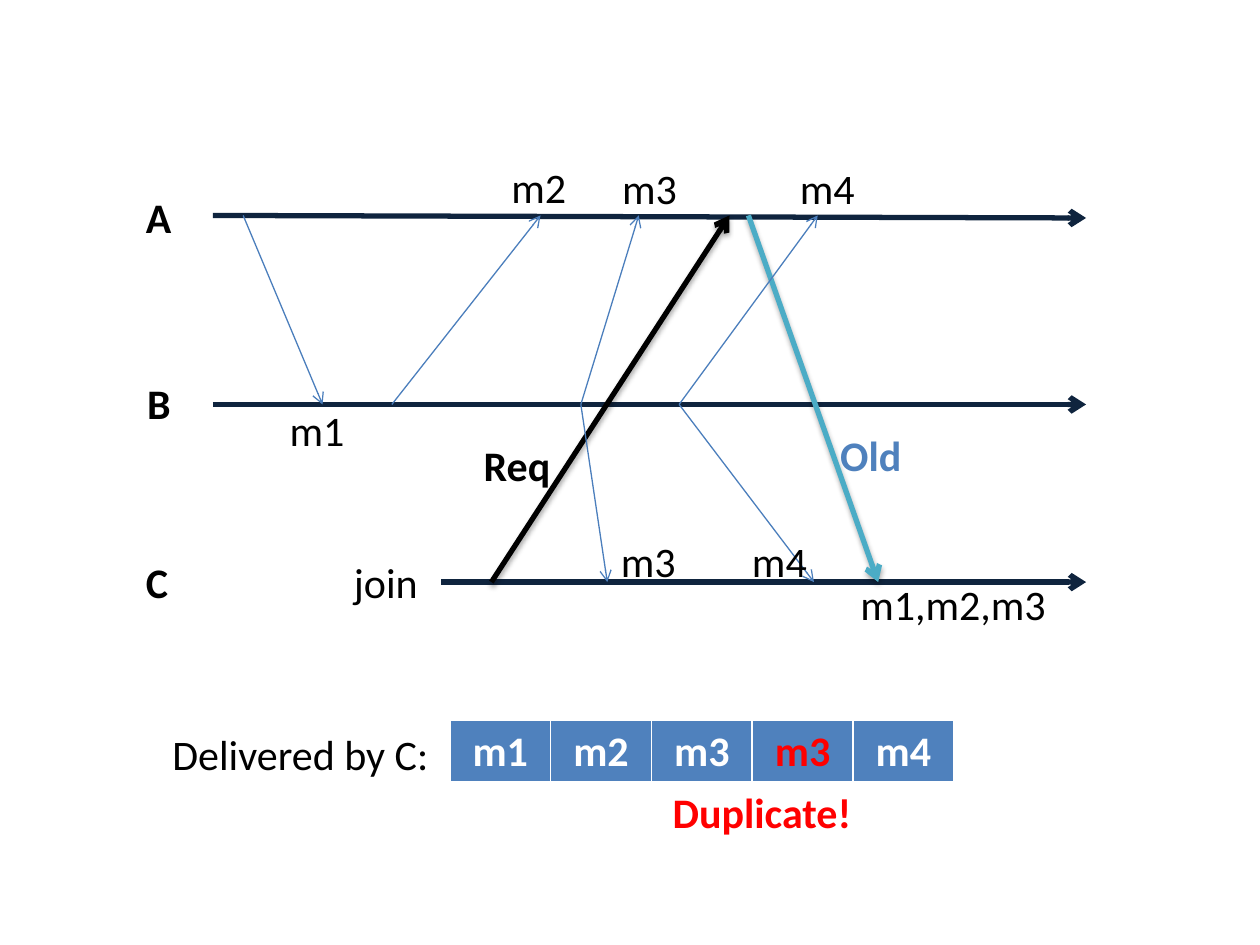
"""Build a message timeline of three processes with the delivery order at C."""
from lxml.etree import SubElement
from pptx import Presentation
from pptx.dml.color import RGBColor as Color
from pptx.enum.shapes import MSO_CONNECTOR as Connector
from pptx.enum.text import MSO_ANCHOR as Anchor, MSO_AUTO_SIZE as AutoSize, PP_ALIGN as Align
from pptx.oxml.ns import qn
from pptx.util import Inches, Pt

THEME = {
    "font": "Calibri", "size": 24, "thick": 3, "thin": 0.75,
    "text": "000000", "axis": "0F243E", "message": "4B7EBC", "request": "000000",
    "reply": "4BACC6", "accent": "4F81BD", "alert": "FF0000", "light": "FFFFFF",
}
LEVELS = {"A": 1.71, "B": 3.21, "C": 4.62}
AXIS_END = 8.62
AXES = [("A", 1.69, 1.73), ("B", 1.69, 3.21), ("C", 3.5, 4.62)]
MESSAGES = [
    ("A", 1.93, "B", 2.56, "message"),
    ("B", 3.11, "A", 4.29, "message"),
    ("C", 3.9, "A", 5.79, "request"),
    ("B", 4.61, "A", 5.07, "message"),
    ("B", 4.61, "C", 4.82, "message"),
    ("A", 5.94, "C", 6.97, "reply"),
    ("B", 5.39, "C", 6.46, "message"),
    ("B", 5.39, "A", 6.49, "message"),
]
LABELS = [
    ("A", 1.06, 1.47, 0.41, "text", True),
    ("B", 1.07, 2.95, 0.4, "text", True),
    ("C", 1.06, 4.37, 0.38, "text", True),
    ("join", 2.71, 4.37, 0.71, "text", False),
    ("Req", 3.74, 3.44, 0.74, "text", True),
    ("Old", 6.57, 3.36, 0.69, "accent", True),
    ("m1", 2.2, 3.16, 0.64, "text", False),
    ("m2", 3.96, 1.23, 0.64, "text", False),
    ("m3", 4.84, 1.24, 0.64, "text", False),
    ("m3", 4.83, 4.2, 0.64, "text", False),
    ("m4", 6.25, 1.24, 0.64, "text", False),
    ("m4", 5.87, 4.2, 0.64, "text", False),
    ("m1,m2,m3", 6.73, 4.54, 1.69, "text", False),
    ("Duplicate!", 5.24, 6.19, 1.64, "alert", True),
    ("Delivered by C:", 1.27, 5.73, 2.25, "text", False),
]
LABEL_HEIGHT = 0.5
DELIVERED = ["m1", "m2", "m3", "m3", "m4"]
TABLE = {"left": 3.57, "top": 5.72, "column": 0.8, "row": 0.47}
BORDERS = {"a:lnL": 1, "a:lnR": 1, "a:lnT": 1, "a:lnB": 3}


def color(name):
    return Color.from_string(THEME[name])


def add_element(parent, tag, **values):
    return SubElement(parent, qn(tag), {key: str(value) for key, value in values.items()})


def write(paragraph, text, color_name, bold):
    run = paragraph.add_run()
    run.text = text
    formats = {"name": THEME["font"], "size": Pt(THEME["size"]), "bold": bold}
    for key, value in formats.items():
        setattr(run.font, key, value)
    run.font.color.rgb = color(color_name)


def add_arrow(slide, start, end, color_name, width, shadow=False):
    points = [Inches(value) for value in (*start, *end)]
    arrow = slide.shapes.add_connector(Connector.STRAIGHT, *points)
    arrow.line.color.rgb = color(color_name)
    arrow.line.width = Pt(width)
    properties = arrow.element.spPr
    add_element(properties.find(qn("a:ln")), "a:tailEnd", type="arrow")
    effects = add_element(properties, "a:effectLst")
    if shadow:
        outer = add_element(effects, "a:outerShdw", blurRad=Pt(3.1), dist=Pt(1.8),
                            dir=90 * 60000, rotWithShape=0)
        shade = add_element(outer, "a:srgbClr", val="000000")
        add_element(shade, "a:alpha", val=35000)


def add_label(slide, text, left, top, width, color_name, bold):
    box = slide.shapes.add_textbox(*map(Inches, (left, top, width, LABEL_HEIGHT)))
    formats = {"word_wrap": False, "auto_size": AutoSize.SHAPE_TO_FIT_TEXT}
    for key, value in formats.items():
        setattr(box.text_frame, key, value)
    write(box.text_frame.paragraphs[0], text, color_name, bold)


def add_delivery_table(slide):
    width = TABLE["column"] * len(DELIVERED)
    bounds = map(Inches, (TABLE["left"], TABLE["top"], width, TABLE["row"]))
    table = slide.shapes.add_table(1, len(DELIVERED), *bounds).table
    for index, (cell, text) in enumerate(zip(table.rows[0].cells, DELIVERED)):
        properties = cell._tc.get_or_add_tcPr()
        for tag, points in BORDERS.items():
            border = add_element(properties, tag, w=Pt(points))
            add_element(add_element(border, "a:solidFill"), "a:srgbClr", val=THEME["light"])
        cell.fill.solid()
        cell.fill.fore_color.rgb = color("accent")
        cell.vertical_anchor = Anchor.TOP
        paragraph = cell.text_frame.paragraphs[0]
        paragraph.alignment = Align.CENTER
        duplicate = text in DELIVERED[:index]
        write(paragraph, text, "alert" if duplicate else "light", True)


def main():
    presentation = Presentation()
    presentation.slide_width, presentation.slide_height = Inches(10), Inches(7.5)
    slide = presentation.slides.add_slide(presentation.slide_layouts[6])
    for process, start, end_level in AXES:
        add_arrow(slide, (start, LEVELS[process]), (AXIS_END, end_level), "axis", THEME["thick"])
    for sender, start, receiver, end, kind in MESSAGES:
        transfer = kind != "message"
        add_arrow(slide, (start, LEVELS[sender]), (end, LEVELS[receiver]), kind,
                  THEME["thick" if transfer else "thin"], transfer)
    for label in LABELS:
        add_label(slide, *label)
    add_delivery_table(slide)
    presentation.save("out.pptx")


if __name__ == "__main__":
    main()
